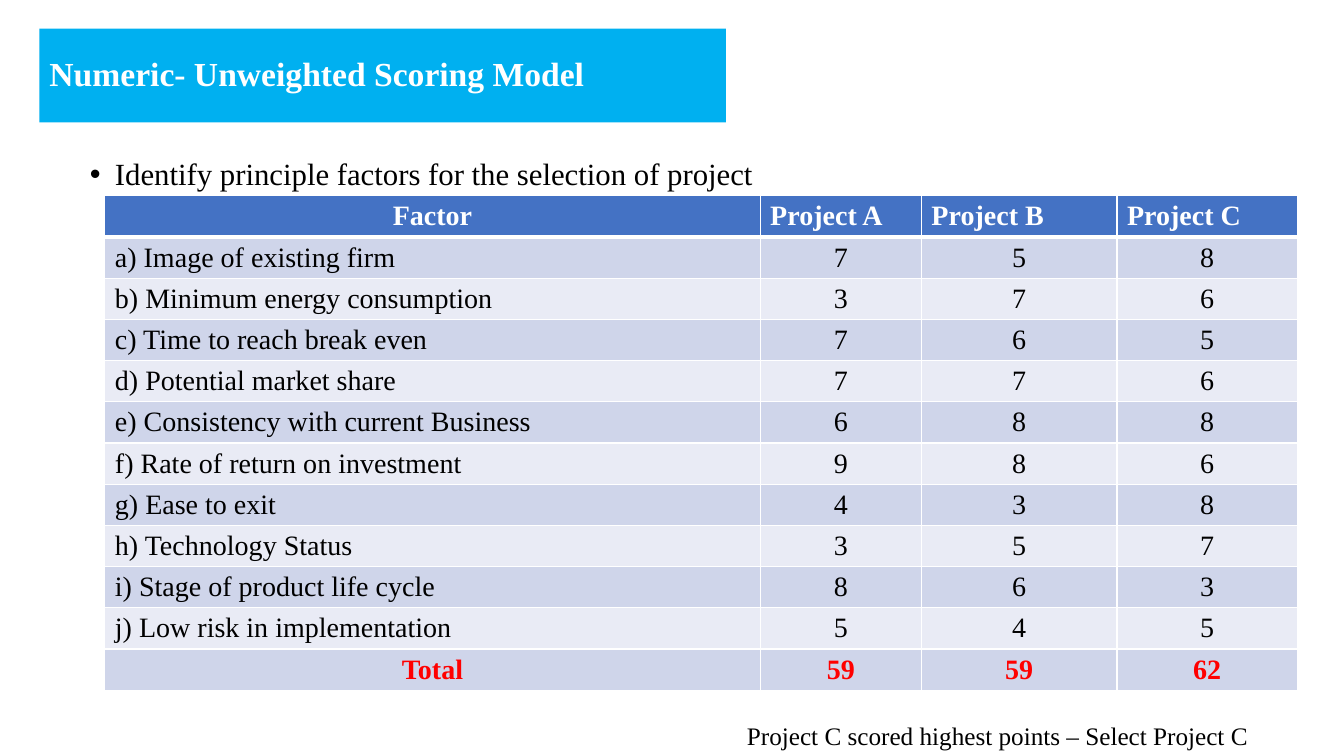
import dataclasses
import typing

import pptx
import pptx.dml.color
import pptx.enum.text
import pptx.oxml
import pptx.oxml.ns
import pptx.util

SLIDE_WIDTH = pptx.util.Inches(13.33)
SLIDE_HEIGHT = pptx.util.Inches(7.5)
FONT = "Times New Roman"
WHITE, BLACK, RED = "FFFFFF", "000000", "FF0000"
TITLE_FILL, HEADER_FILL = "00B0F0", "4472C4"
BAND_FILLS = ("E9EBF5", "CFD5EA")
LEFT = pptx.enum.text.PP_ALIGN.LEFT
CENTER = pptx.enum.text.PP_ALIGN.CENTER
MIDDLE = pptx.enum.text.MSO_ANCHOR.MIDDLE
TOP = pptx.enum.text.MSO_ANCHOR.TOP
NO_FIT = pptx.enum.text.MSO_AUTO_SIZE.NONE
COLUMN_SHARES = (48.76, 12, 14.55, 13.43)
ROW_SHARE = 5.45


@dataclasses.dataclass(frozen=True)
class Frame:
    """Percentages of the slide's width and height."""

    left: float
    top: float
    width: float
    height: float

    def lengths(self) -> tuple[int, int, int, int]:
        return (across(self.left), down(self.top), across(self.width), down(self.height))


@dataclasses.dataclass(frozen=True)
class Factor:
    name: str
    scores: tuple[int, int, int]


FACTORS = (
    Factor("a) Image of existing firm", (7, 5, 8)),
    Factor("b) Minimum energy consumption", (3, 7, 6)),
    Factor("c) Time to reach break even", (7, 6, 5)),
    Factor("d) Potential market share", (7, 7, 6)),
    Factor("e) Consistency with current Business", (6, 8, 8)),
    Factor("f) Rate of return on investment", (9, 8, 6)),
    Factor("g) Ease to exit", (4, 3, 8)),
    Factor("h) Technology Status", (3, 5, 7)),
    Factor("i) Stage of product life cycle", (8, 6, 3)),
    Factor("j) Low risk in implementation", (5, 4, 5)),
)


def across(share: float) -> int:
    return round(SLIDE_WIDTH * share / 100)


def down(share: float) -> int:
    return round(SLIDE_HEIGHT * share / 100)


def color(value: str) -> pptx.dml.color.RGBColor:
    return pptx.dml.color.RGBColor.from_string(value)


def paint(target: typing.Any, value: str) -> None:
    target.fill.solid()
    target.fill.fore_color.rgb = color(value)


def write(
    frame: typing.Any,
    text: str,
    *,
    size: float,
    ink: str = BLACK,
    bold: bool = False,
    align: typing.Any = LEFT,
    line_spacing: float = 1.0,
    space_before: float = 0,
) -> typing.Any:
    para = frame.paragraphs[0]
    para.alignment = align
    para.line_spacing = line_spacing
    para.space_before = pptx.util.Pt(space_before)
    span = para.add_run()
    span.text = text
    span.font.name = FONT
    span.font.size = pptx.util.Pt(size)
    span.font.bold = bold
    span.font.color.rgb = color(ink)
    return para


def place(shape: typing.Any, frame: Frame, anchor: typing.Any) -> None:
    shape.left, shape.top, shape.width, shape.height = frame.lengths()
    shape.text_frame.auto_size = NO_FIT
    shape.text_frame.vertical_anchor = anchor


def border(cell: typing.Any, side: str, points: float) -> None:
    namespace = pptx.oxml.ns.nsdecls("a")
    line = pptx.oxml.parse_xml(
        f'<a:ln{side} {namespace} w="{pptx.util.Pt(points)}"><a:solidFill>'
        f'<a:srgbClr val="{WHITE}"/></a:solidFill></a:ln{side}>'
    )
    cell._tc.get_or_add_tcPr().append(line)


def add_title(page: typing.Any) -> None:
    title = page.shapes.title
    place(title, Frame(2.93, 3.79, 51.09, 12.4), MIDDLE)
    paint(title, TITLE_FILL)
    write(title.text_frame, "Numeric- Unweighted Scoring Model",
          size=24, ink=WHITE, bold=True, line_spacing=0.9)


def add_body(page: typing.Any) -> None:
    body = page.placeholders[1]
    place(body, Frame(5.93, 20.4, 86.27, 63.47), TOP)
    para = write(body.text_frame, "Identify principle factors for the selection of project",
                 size=22, line_spacing=0.9, space_before=10)
    indent = pptx.util.Inches(0.25)
    properties = para._p.get_or_add_pPr()
    properties.set("marL", str(indent))
    properties.set("indent", str(-indent))


def add_scores(page: typing.Any) -> None:
    totals = [sum(column) for column in zip(*(factor.scores for factor in FACTORS))]
    rows = [
        ("Factor", "Project A", "Project B", "Project C"),
        *((factor.name, *factor.scores) for factor in FACTORS),
        ("Total", *totals),
    ]
    frame = Frame(7.8, 25.9, sum(COLUMN_SHARES), ROW_SHARE * len(rows))
    table = page.shapes.add_table(len(rows), len(COLUMN_SHARES), *frame.lengths()).table
    for column, share in zip(table.columns, COLUMN_SHARES):
        column.width = across(share)
    for row in table.rows:
        row.height = down(ROW_SHARE)
    for row_index, values in enumerate(rows):
        header, total = row_index == 0, row_index == len(rows) - 1
        for column_index, value in enumerate(values):
            cell = table.cell(row_index, column_index)
            for side in "LRTB":
                thick = (header and side == "B") or (row_index == 1 and side == "T")
                border(cell, side, 3 if thick else 1)
            paint(cell, HEADER_FILL if header else BAND_FILLS[row_index % 2])
            centered = total or header == (column_index == 0)
            write(cell.text_frame, str(value), size=20, bold=header or total,
                  ink=WHITE if header else RED if total else BLACK,
                  align=CENTER if centered else LEFT)


def add_conclusion(page: typing.Any) -> None:
    box = page.shapes.add_textbox(*Frame(54.84, 94.67, 41.71, 5.33).lengths())
    box.text_frame.word_wrap = True
    write(box.text_frame, "Project C scored highest points – Select Project C", size=18)


def main() -> None:
    deck = pptx.Presentation()
    deck.slide_width, deck.slide_height = SLIDE_WIDTH, SLIDE_HEIGHT
    page = deck.slides.add_slide(deck.slide_layouts[1])
    add_title(page)
    add_body(page)
    add_scores(page)
    add_conclusion(page)
    deck.save("out.pptx")


if __name__ == "__main__":
    main()
